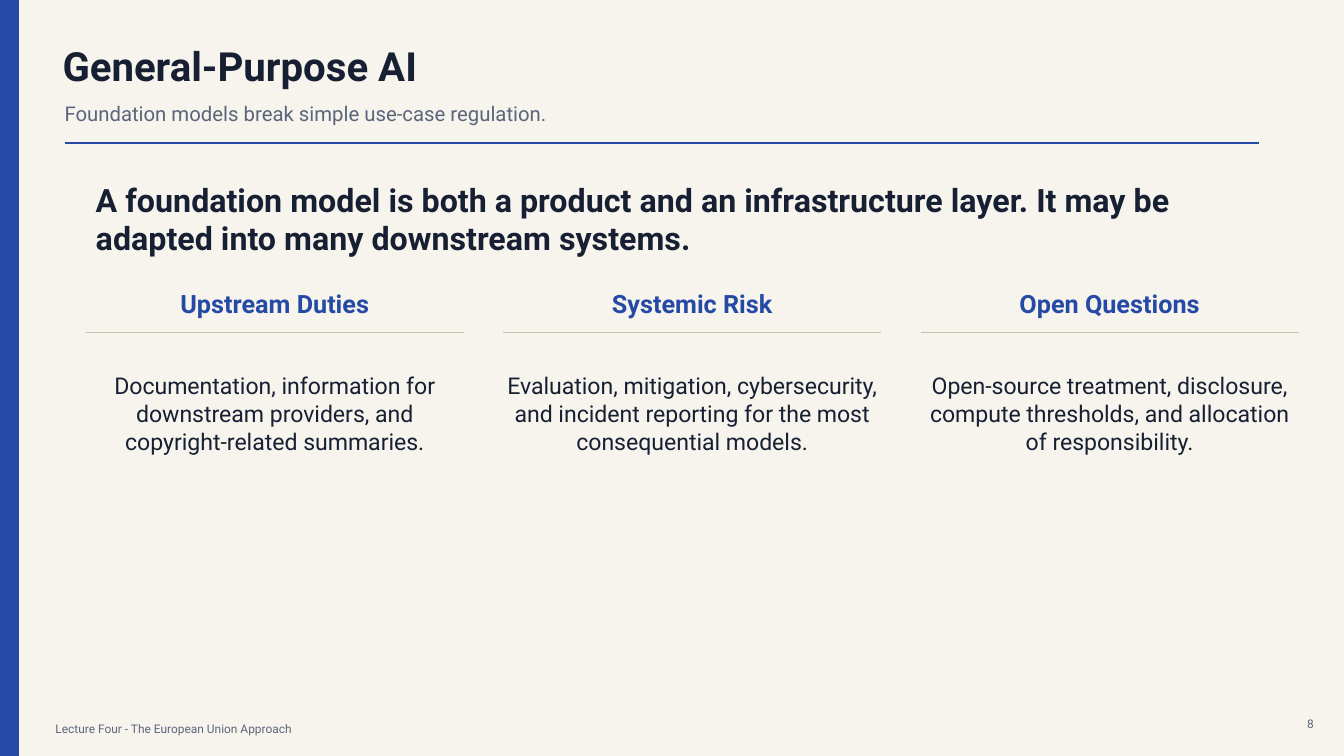
from dataclasses import dataclass

from pptx import Presentation
from pptx.dml.color import RGBColor
from pptx.enum.shapes import MSO_CONNECTOR, MSO_SHAPE
from pptx.enum.text import MSO_ANCHOR, MSO_AUTO_SIZE, PP_ALIGN
from pptx.oxml.ns import qn
from pptx.util import Emu, Pt

RECT = MSO_SHAPE.RECTANGLE
STRAIGHT = MSO_CONNECTOR.STRAIGHT
MIDDLE = MSO_ANCHOR.MIDDLE
NO_FIT = MSO_AUTO_SIZE.NONE
LEFT, CENTER, RIGHT = PP_ALIGN.LEFT, PP_ALIGN.CENTER, PP_ALIGN.RIGHT
EMU_PER_PX = 9144  # 100 px to the inch
SLIDE_W, SLIDE_H = 1333, 750
TITLE_ONLY = 5


@dataclass(frozen=True)
class Theme:
    font: str = "Roboto"
    paper: str = "F7F4EE"
    accent: str = "244AA5"
    ink: str = "172033"
    muted: str = "5B657A"
    rule: str = "C9BDAE"
    title: float = 28.7
    subtitle: float = 14.5
    lead: float = 23
    heading: float = 18
    body: float = 16.5
    footer: float = 8.5


def px(n):
    return Emu(n * EMU_PER_PX)


def rgb(code):
    return RGBColor.from_string(code)


def write(tf, text, *, font, size, color, bold=False, align=LEFT):
    tf.word_wrap = True
    tf.auto_size = NO_FIT
    tf.vertical_anchor = MIDDLE
    tf.margin_left = tf.margin_right = tf.margin_top = tf.margin_bottom = 0
    p = tf.paragraphs[0]
    p.alignment = align
    r = p.add_run()
    r.text = text
    r.font.name = font
    r.font.size = Pt(size)
    r.font.bold = bold
    r.font.color.rgb = rgb(color)


class Deck:
    def __init__(self, theme):
        self.theme = theme
        self.prs = Presentation()
        self.prs.slide_width, self.prs.slide_height = px(SLIDE_W), px(SLIDE_H)

    def add_slide(self):
        self.s = self.prs.slides.add_slide(self.prs.slide_layouts[TITLE_ONLY])
        fill = self.s.background.fill
        fill.solid()
        fill.fore_color.rgb = rgb(self.theme.paper)

    def title(self, text, x, y, w, h):
        sp = self.s.shapes.title
        sp.left, sp.top, sp.width, sp.height = map(px, (x, y, w, h))
        write(sp.text_frame, text, font=self.theme.font, size=self.theme.title,
              color=self.theme.ink, bold=True)

    def text(self, text, x, y, w, h, **style):
        sp = self.s.shapes.add_textbox(*map(px, (x, y, w, h)))
        write(sp.text_frame, text, font=self.theme.font, **style)

    def bar(self, x, y, w, h, color):
        sp = self.s.shapes.add_shape(RECT, *map(px, (x, y, w, h)))
        sp.shadow.inherit = False
        sp.fill.solid()
        sp.fill.fore_color.rgb = rgb(color)
        sp.line.color.rgb = rgb(color)
        sp.line.width = Pt(1)

    def rule(self, x, y, w, color, weight):
        """Draw a horizontal line."""
        line = self.s.shapes.add_connector(STRAIGHT, *map(px, (x, y, x + w, y)))
        line.line.color.rgb = rgb(color)
        line.line.width = Pt(weight)
        sp_pr = line._element.spPr
        sp_pr.append(sp_pr.makeelement(qn("a:effectLst"), {}))

    def column(self, heading, body, x, w):
        t = self.theme
        self.text(heading, x, 285, w, 32, size=t.heading, color=t.accent,
                  bold=True, align=CENTER)
        self.rule(x, 330, w, t.rule, 1)
        self.text(body, x, 360, w, 100, size=t.body, color=t.ink, align=CENTER)


COLUMNS = [
    ("Upstream Duties",
     "Documentation, information for downstream providers, and "
     "copyright-related summaries."),
    ("Systemic Risk",
     "Evaluation, mitigation, cybersecurity, and incident reporting for the "
     "most consequential models."),
    ("Open Questions",
     "Open-source treatment, disclosure, compute thresholds, and allocation "
     "of responsibility."),
]
COLUMN_X, COLUMN_W, COLUMN_GAP = 85, 375, 39


def main():
    t = Theme()
    deck = Deck(t)
    deck.add_slide()
    deck.bar(0, 0, 18, SLIDE_H, t.accent)
    deck.text("Lecture Four - The European Union Approach", 55, 713, 900, 20,
              size=t.footer, color=t.muted)
    deck.text("8", 1275, 708, 28, 20, size=t.footer, color=t.muted, align=RIGHT)
    deck.title("General-Purpose AI", 62, 42, 980, 45)
    deck.text("Foundation models break simple use-case regulation.",
              64, 95, 1090, 35, size=t.subtitle, color=t.muted)
    deck.rule(64, 142, 1185, t.accent, 1.25)
    deck.text("A foundation model is both a product and an infrastructure layer. "
              "It may be adapted into many downstream systems.",
              95, 182, 1110, 70, size=t.lead, color=t.ink, bold=True)
    for i, (heading, body) in enumerate(COLUMNS):
        deck.column(heading, body, COLUMN_X + i * (COLUMN_W + COLUMN_GAP), COLUMN_W)
    deck.prs.save("out.pptx")


if __name__ == "__main__":
    main()
